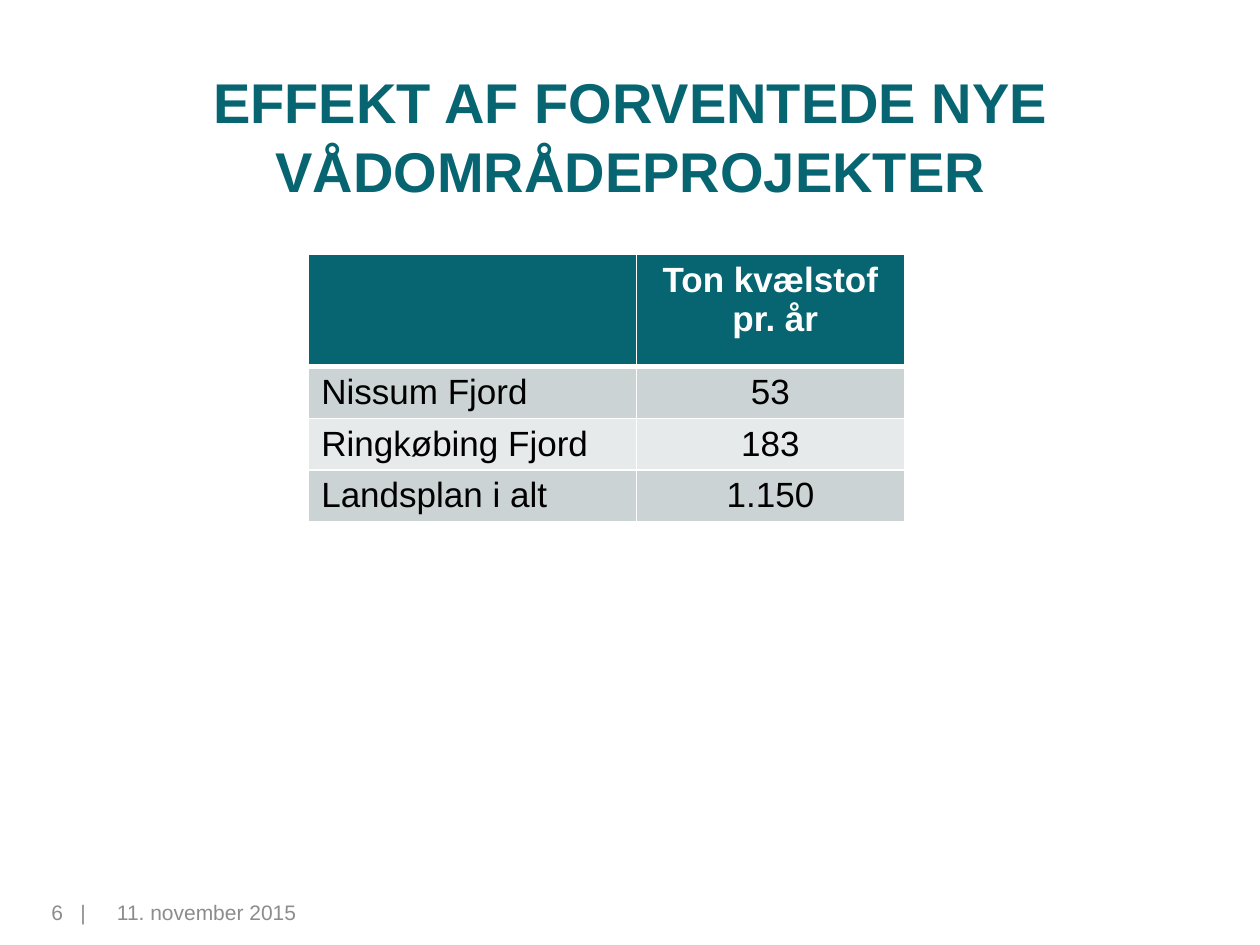
from pptx import Presentation
from pptx.dml.color import RGBColor
from pptx.enum.text import MSO_ANCHOR as Anchor, MSO_AUTO_SIZE as Fit, PP_ALIGN as Align
from pptx.oxml import parse_xml
from pptx.oxml.ns import nsdecls
from pptx.util import Inches, Pt

TEAL, WHITE, BLACK, GRAY = "076471", "FFFFFF", "000000", "8C8C8C"
BANDS = ["CCD3D5", "E7EAEB"]


def color(code):
    return RGBColor.from_string(code)


class Deck:
    font = "Arial"

    def __init__(self, wide, high):
        self.prs = Presentation()
        self.prs.slide_width, self.prs.slide_height = Inches(wide), Inches(high)
        self.wide, self.high = wide, high
        self.slide = self.prs.slides.add_slide(self.prs.slide_layouts[5])

    def area(self, x, y, w, h):
        """Turn shares of the slide, in percent, into lengths."""
        sides = (self.wide, self.high) * 2
        return [Inches(part * side / 100) for part, side in zip((x, y, w, h), sides)]

    def run(self, para, text, size, tint, bold=False, gap=0):
        run = para.add_run()
        run.text = text
        font = run.font
        font.name, font.size, font.bold = self.font, Pt(size), bold
        font.color.rgb = color(tint)
        if gap:
            run._r.get_or_add_rPr().set("spc", str(gap * 100))

    def title(self, text, area):
        box = self.slide.shapes.title
        box.left, box.top, box.width, box.height = self.area(*area)
        frame = box.text_frame
        frame.word_wrap, frame.auto_size = True, Fit.NONE
        frame.vertical_anchor = Anchor.MIDDLE
        para = frame.paragraphs[0]
        para.alignment, para.line_spacing = Align.CENTER, 1.04
        self.run(para, text, 32, TEAL, True)

    def note(self, parts, area, align=Align.LEFT):
        frame = self.slide.shapes.add_textbox(*self.area(*area)).text_frame
        frame.word_wrap = True
        para = frame.paragraphs[0]
        para.alignment = align
        for text, gap in parts:
            self.run(para, text, 12, GRAY, gap=gap)

    def border(self, cell, head):
        props = cell._tc.get_or_add_tcPr()
        for spot, side in enumerate("LRTB"):
            width = Pt(3 if head and side == "B" else 1)
            props.insert(spot, parse_xml(
                f'<a:ln{side} {nsdecls("a")} w="{width}"><a:solidFill>'
                f'<a:srgbClr val="{WHITE}"/></a:solidFill></a:ln{side}>'))

    def table(self, rows, area, cols, highs):
        grid = self.slide.shapes.add_table(len(rows), len(cols), *self.area(*area)).table
        for col, width in zip(grid.columns, cols):
            col.width = Inches(width)
        for r, (row, high) in enumerate(zip(rows, highs)):
            grid.rows[r].height = Inches(high)
            head = r == 0
            for c, text in enumerate(row):
                cell = grid.cell(r, c)
                cell.fill.solid()
                cell.fill.fore_color.rgb = color(TEAL if head else BANDS[(r - 1) % 2])
                self.border(cell, head)
                para = cell.text_frame.paragraphs[0]
                para.alignment = Align.CENTER if c else Align.LEFT
                para.font.size = Pt(20)
                for n, line in enumerate(text.split("\n") if text else []):
                    if n:
                        para.add_line_break()
                    self.run(para, line, 20, WHITE if head else BLACK, head)


deck = Deck(10, 7.5)

# Title
deck.title("EFFEKT AF FORVENTEDE NYE VÅDOMRÅDEPROJEKTER", (2, 5.87, 96.1, 16.67))

# Nitrogen table
deck.table(
    [["", "Ton kvælstof\n pr. år"],
     ["Nissum Fjord", "53"],
     ["Ringkøbing Fjord", "183"],
     ["Landsplan i alt", "1.150"]],
    (24.5, 26.93, 47.3, 28.27), [2.6, 2.13], [0.89] + [0.41] * 3)

# Footer: date and page number
deck.note([("11. november 2015", 0)], (8.3, 94.53, 23.3, 5.33))
deck.note([("6", 10), ("|", 0)], (0, 94.53, 7.8, 5.33), Align.RIGHT)

deck.prs.save("out.pptx")
